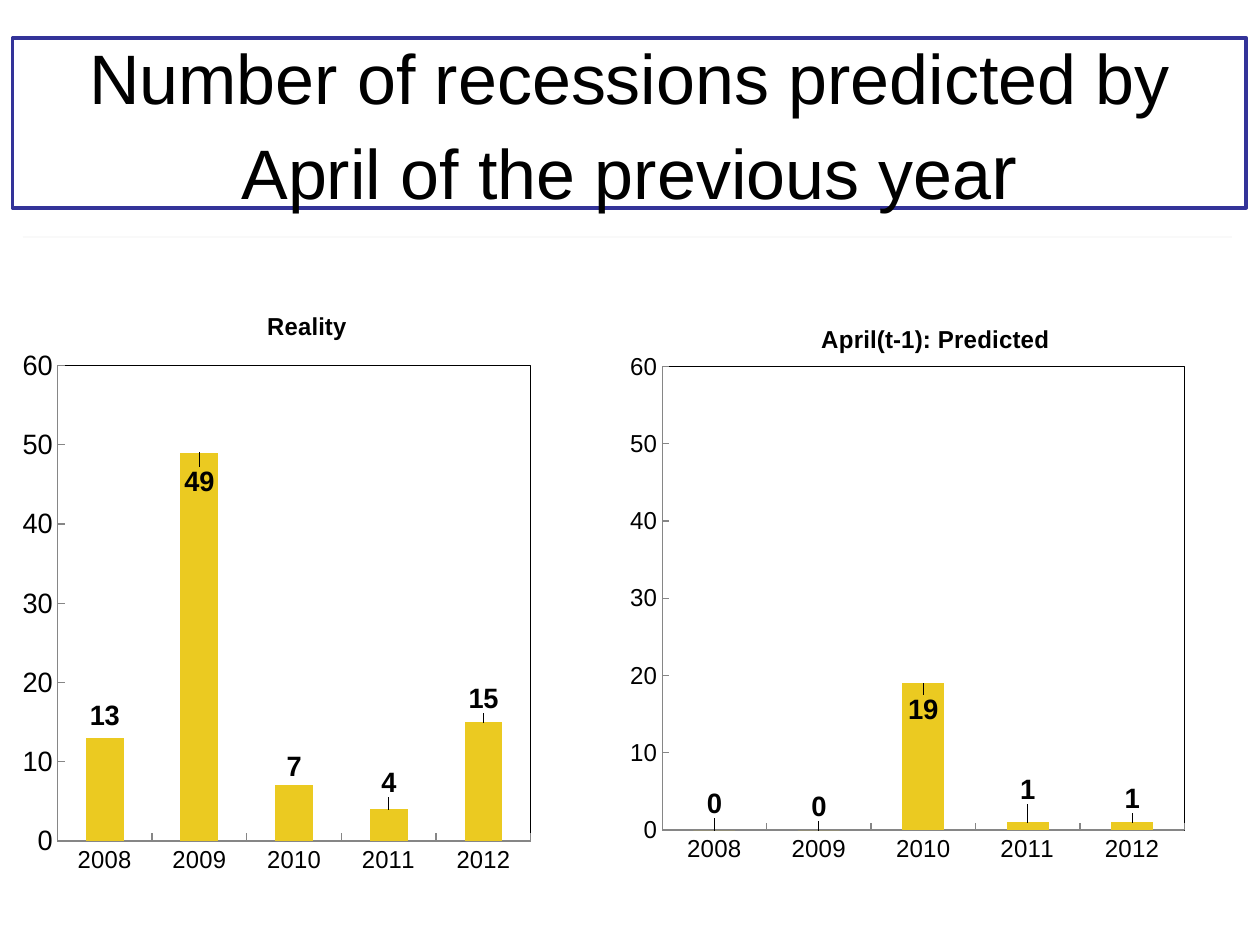
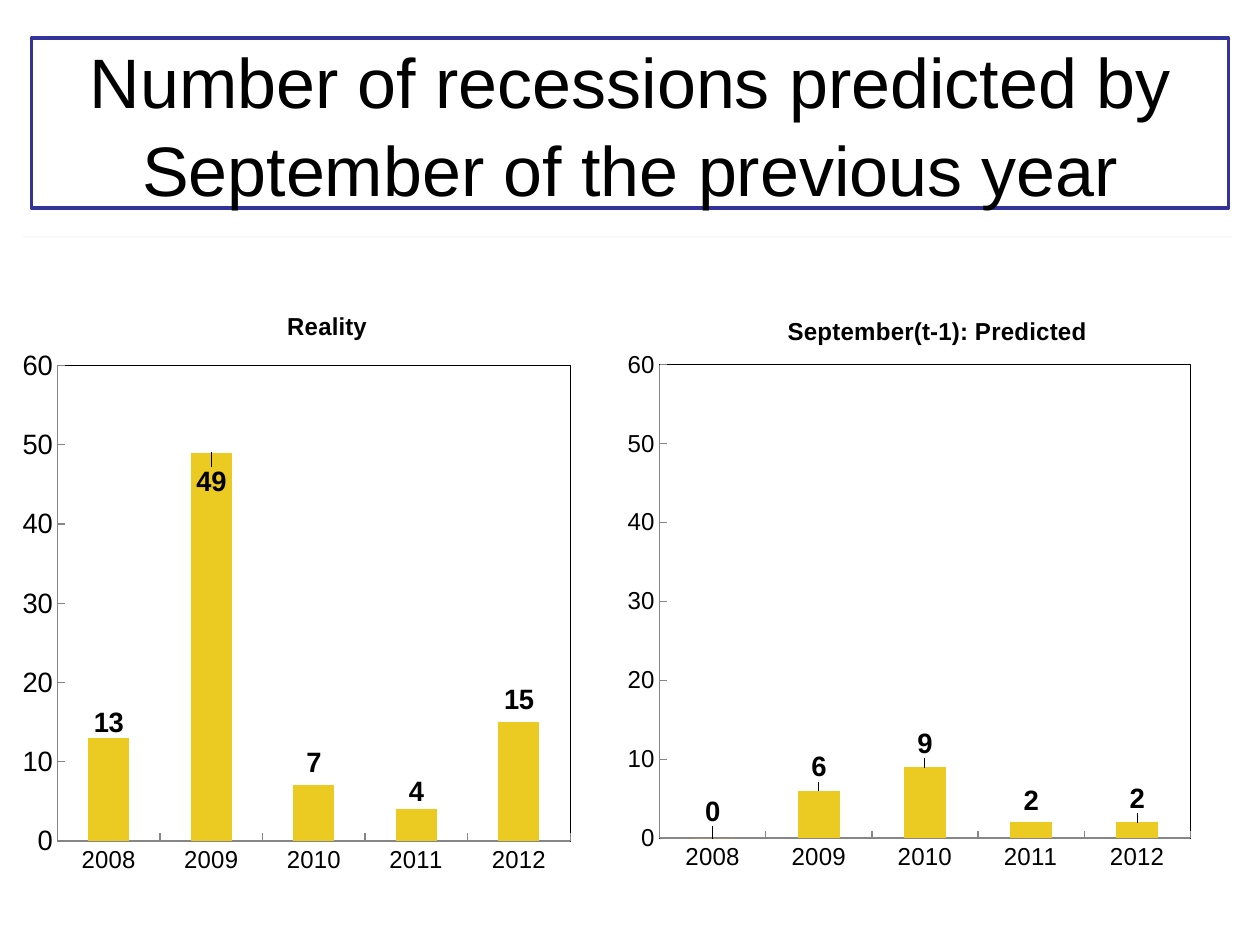
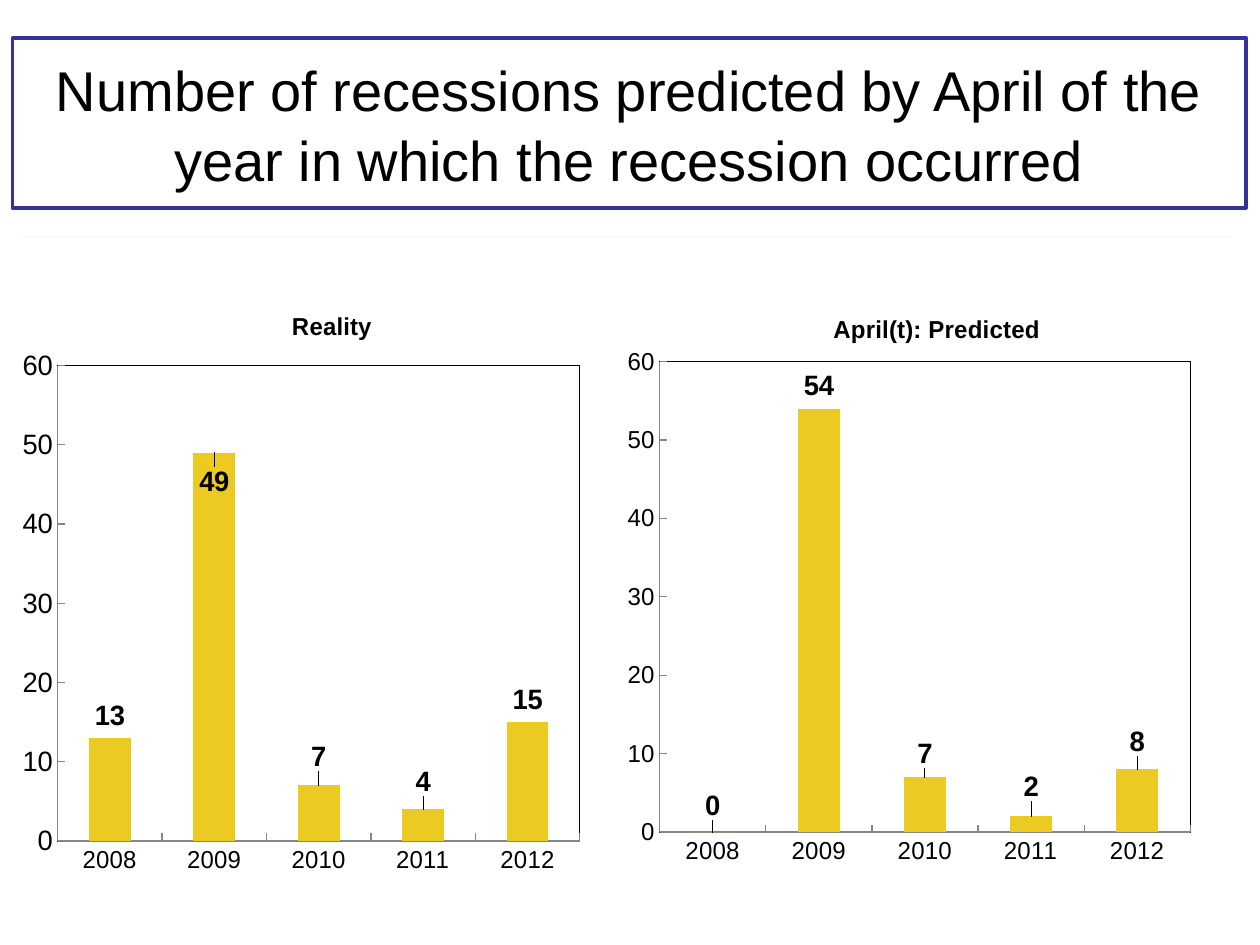
from dataclasses import dataclass

from lxml import etree
from pptx import Presentation
from pptx.chart.data import CategoryChartData
from pptx.dml.color import RGBColor
from pptx.enum.chart import XL_CHART_TYPE, XL_LABEL_POSITION, XL_TICK_MARK
from pptx.enum.shapes import MSO_CONNECTOR
from pptx.enum.text import MSO_ANCHOR, MSO_AUTO_SIZE, PP_ALIGN
from pptx.oxml import parse_xml
from pptx.oxml.ns import nsdecls, qn
from pptx.util import Inches, Pt

COLUMN = XL_CHART_TYPE.COLUMN_CLUSTERED
OUTSIDE_END = XL_LABEL_POSITION.OUTSIDE_END
INSIDE, NO_TICK = XL_TICK_MARK.INSIDE, XL_TICK_MARK.NONE
STRAIGHT = MSO_CONNECTOR.STRAIGHT
MIDDLE = MSO_ANCHOR.MIDDLE
NO_AUTOFIT = MSO_AUTO_SIZE.NONE
CENTER = PP_ALIGN.CENTER
TITLE_ONLY = 5


@dataclass(frozen=True)
class Theme:
    """Colours, font and type sizes shared by the slides."""
    font: str = "Arial"
    text: RGBColor = RGBColor(0x00, 0x00, 0x00)
    frame: RGBColor = RGBColor(0x33, 0x33, 0x99)
    rule: RGBColor = RGBColor(0xF9, 0xF9, 0xF9)
    bar: RGBColor = RGBColor(0xEB, 0xCA, 0x21)
    axis: RGBColor = RGBColor(0x86, 0x86, 0x86)
    chart_title: int = 14
    category: int = 14
    label: int = 16


THEME = Theme()
YEARS = ["2008", "2009", "2010", "2011", "2012"]
REALITY = {
    "title": "Reality", "title_width": 0.64, "values": [13, 49, 7, 4, 15],
    "value_size": 16, "plot": (0.038, 0.14, 0.912, 0.786),
}
PREDICTED = {"value_size": 14, "plot": (0.038, 0.13, 0.922, 0.783)}
WIDE, NARROW = (0.1, 0.3, 9.79, 1.35), (0.25, 0.3, 9.5, 1.35)

SLIDES = [
    {
        "title": [("Number of recessions predicted by April of the previous yea", 40),
                  ("r", 44)],
        "box": WIDE,
        "charts": [
            PREDICTED | {"title": "April(t-1): Predicted", "title_width": 1.81,
                         "values": [0, 0, 19, 1, 1], "box": (5, 2.33, 4.58, 4.67),
                         "plot": (0.038, 0.124, 0.922, 0.788),
                         "shifts": [-0.05, -0.03, 0.37, -0.1, -0.03]},
            REALITY | {"box": (0.18, 2.23, 4.24, 4.8),
                       "shifts": [-0.02, 0.39, 0.01, -0.05, -0.03]},
        ],
    },
    {
        "title": [("Number of recessions predicted by September of the previous year", 40)],
        "box": NARROW,
        "charts": [
            REALITY | {"box": (0.18, 2.23, 4.57, 4.8),
                       "shifts": [0.04, 0.39, -0.02, 0.02, -0.02]},
            PREDICTED | {"title": "September(t-1): Predicted", "title_width": 2.38,
                         "values": [0, 6, 9, 2, 2], "box": (4.98, 2.27, 4.65, 4.8),
                         "shifts": [-0.05, -0.03, -0.03, -0.01, -0.03]},
        ],
    },
    {
        "title": [("Number of recessions predicted by April of the year in which "
                   "the recession occurred", 32)],
        "box": WIDE,
        "charts": [
            REALITY | {"box": (0.18, 2.23, 4.65, 4.8),
                       "shifts": [-0.02, 0.39, -0.07, -0.06, -0.02]},
            PREDICTED | {"title": "April(t): Predicted", "title_width": 1.64,
                         "values": [0, 54, 7, 2, 8], "box": (4.98, 2.25, 4.65, 4.77),
                         "shifts": [-0.05, -0.02, -0.03, -0.08, -0.06]},
        ],
    },
]


def apply(target, values):
    """Set each named attribute of the target."""
    for name, value in values.items():
        setattr(target, name, value)


def format_font(font, size, bold=False):
    """Give a font the theme's face and colour."""
    apply(font, {"name": THEME.font, "size": Pt(size), "bold": bold})
    font.color.rgb = THEME.text


def format_line(line, color, width):
    """Give a line its colour and width."""
    line.color.rgb = color
    line.width = Pt(width)


def set_layout(parent, index, values):
    """Place a chart part by a manual layout."""
    for old in parent.findall(qn("c:layout")):
        parent.remove(old)
    layout = etree.Element(qn("c:layout"))
    manual = etree.SubElement(layout, qn("c:manualLayout"))
    for name, value in values.items():
        etree.SubElement(manual, qn(f"c:{name}")).set("val", str(value))
    parent.insert(index, layout)


def add_title(slide, runs, box):
    """Fill and frame the title placeholder."""
    sp = slide.shapes.title
    apply(sp, dict(zip(("left", "top", "width", "height"), map(Inches, box))))
    format_line(sp.line, THEME.frame, 2)
    tf = sp.text_frame
    apply(tf, {"word_wrap": True, "auto_size": NO_AUTOFIT, "vertical_anchor": MIDDLE})
    p = tf.paragraphs[0]
    apply(p, {"alignment": CENTER, "line_spacing": 1.04})
    for text, size in runs:
        r = p.add_run()
        r.text = text
        format_font(r.font, size)


def add_rule(slide):
    """Draw the pale rule below the title."""
    line = slide.shapes.add_connector(
        STRAIGHT, Inches(0.18), Inches(1.88), Inches(9.78), Inches(1.88))
    format_line(line.line, THEME.rule, 1.5)
    etree.SubElement(line.line._get_or_add_ln().getparent(), qn("a:effectLst"))


def format_chart_title(chart, text, text_width, width, height):
    """Write the chart title and centre it above the plot."""
    title = chart.chart_title
    r = title.text_frame.paragraphs[0].add_run()
    r.text = text
    format_font(r.font, THEME.chart_title, True)
    x = (width - text_width) / 2 + 0.04
    element = chart.element.xpath("c:chart/c:title")[0]
    set_layout(element, 1, {"xMode": "edge", "yMode": "edge",
                            "x": x / width, "y": 0.2 / height})
    element.find(qn("c:overlay")).set("val", "1")


def format_axis(axis, size):
    """Set an axis with inner ticks and no gridlines."""
    apply(axis, {"major_tick_mark": INSIDE, "minor_tick_mark": NO_TICK,
                 "has_major_gridlines": False})
    format_font(axis.tick_labels.font, size)
    format_line(axis.format.line, THEME.axis, 0.75)


def format_plot_area(chart, plot):
    """Place the plot area and outline it."""
    area = chart.element.xpath("c:chart/c:plotArea")[0]
    set_layout(area, 0, {"layoutTarget": "inner", "xMode": "edge", "yMode": "edge"}
               | dict(zip("xywh", plot)))
    area.append(parse_xml(
        f'<c:spPr {nsdecls("c", "a")}><a:noFill/><a:ln w="9525"><a:solidFill>'
        f'<a:srgbClr val="{THEME.text}"/></a:solidFill></a:ln></c:spPr>'))


def add_labels(chart, shifts, height):
    """Label every bar and move each label by its shift in inches."""
    series = chart.plots[0].series[0]
    for i, shift in enumerate(shifts):
        label = series.points[i].data_label
        format_font(label.font, THEME.label, True)
        label.position = OUTSIDE_END
    for element, shift in zip(chart.element.xpath(".//c:dLbl"), shifts):
        set_layout(element, 1, {"x": 0, "y": shift / height})


def add_column_chart(slide, title, title_width, values, value_size, plot, box, shifts):
    """Add one column chart of recessions by year."""
    data = CategoryChartData()
    data.categories = YEARS
    data.add_series("Series 1", values)
    chart = slide.shapes.add_chart(COLUMN, *map(Inches, box), data).chart
    apply(chart, {"has_legend": False, "has_title": True})
    format_font(chart.font, THEME.category)
    width, height = box[2:]
    format_chart_title(chart, title, title_width, width, height)
    format_axis(chart.category_axis, THEME.category)
    format_axis(chart.value_axis, value_size)
    apply(chart.value_axis, {"minimum_scale": 0, "maximum_scale": 60, "major_unit": 10})
    apply(chart.plots[0], {"gap_width": 150, "vary_by_categories": False})
    fill = chart.plots[0].series[0].format.fill
    fill.solid()
    fill.fore_color.rgb = THEME.bar
    format_plot_area(chart, plot)
    add_labels(chart, shifts, height)


def main():
    """Build the three slides and save them."""
    prs = Presentation()
    apply(prs, {"slide_width": Inches(10), "slide_height": Inches(7.5)})
    for content in SLIDES:
        slide = prs.slides.add_slide(prs.slide_layouts[TITLE_ONLY])
        add_title(slide, content["title"], content["box"])
        add_rule(slide)
        for chart in content["charts"]:
            add_column_chart(slide, **chart)
    prs.save("out.pptx")


if __name__ == "__main__":
    main()
